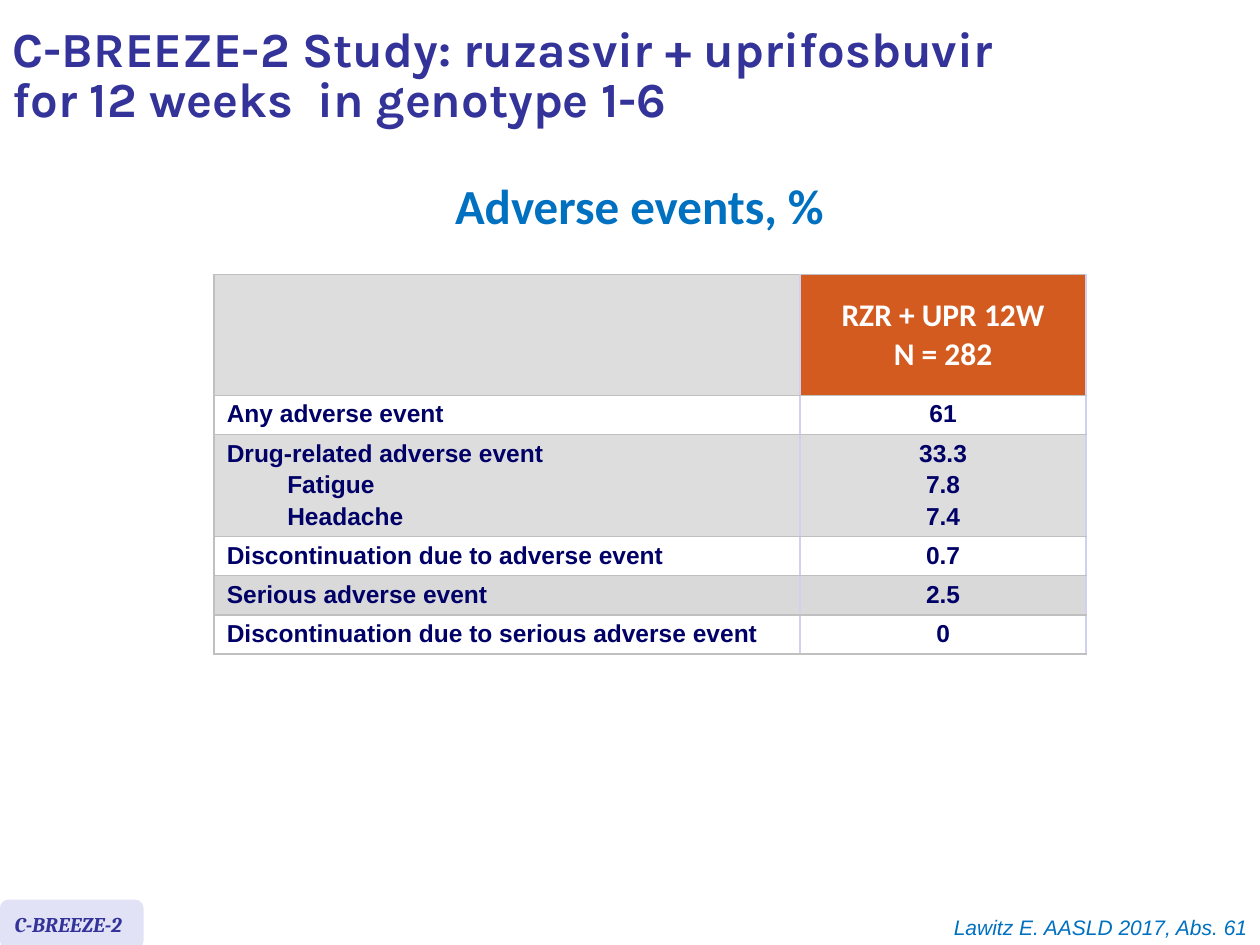
from lxml.etree import SubElement
from pptx import Presentation
from pptx.dml.color import RGBColor
from pptx.enum.shapes import MSO_SHAPE
from pptx.enum.text import MSO_ANCHOR, PP_ALIGN as Align
from pptx.oxml.ns import qn
from pptx.util import Inches, Pt

TITLE = "C-BREEZE-2 Study: ruzasvir + uprifosbuvir for 12 weeks  in genotype 1-6"
HEAD = "Adverse events, %"
CITE = "Lawitz E. AASLD 2017, Abs. 61"
BADGE = "C-BREEZE-2"
ROWS = [
    (0.96, "DDDDDD", [], ["RZR + UPR 12W", "N = 282"]),
    (0.31, "FFFFFF", ["Any adverse event"], ["61"]),
    (0.81, "DDDDDD", ["Drug-related adverse event", "Fatigue", "Headache"],
     ["33.3", "7.8", "7.4"]),
    (0.31, "FFFFFF", ["Discontinuation due to adverse event"], ["0.7"]),
    (0.31, "D9D9D9", ["Serious adverse event"], ["2.5"]),
    (0.31, "FFFFFF", ["Discontinuation due to serious adverse event"], ["0"]),
]
COLS = [4.65, 2.27]
GREY, LILAC, INDIGO, BLUE = "C0C0C0", "D0D0F0", "333399", "0070C0"


def paint(fill, tone):
    fill.solid()
    fill.fore_color.rgb = RGBColor.from_string(tone)


def style(par, size, face, tone, bold=True, italic=False, align=Align.LEFT):
    par.alignment = align
    font = par.font
    font.size, font.name, font.bold, font.italic = Pt(size), face, bold, italic
    font.color.rgb = RGBColor.from_string(tone)


def place(shape, left, top, width, height):
    shape.left, shape.top = Inches(left), Inches(top)
    shape.width, shape.height = Inches(width), Inches(height)


def write(shape, text, *look, **more):
    frame = shape.text_frame
    frame.word_wrap = True
    frame.vertical_anchor = MSO_ANCHOR.MIDDLE
    frame.text = text
    style(frame.paragraphs[0], *look, **more)
    return frame.paragraphs[0]


def label(slide, box, *look, **more):
    write(slide.shapes.add_textbox(*map(Inches, box)), *look, **more)


def edge(cell, tones):
    props = cell._tc.get_or_add_tcPr()
    for side, tone in zip("LRTB", tones):
        line = SubElement(props, qn(f"a:ln{side}"), w=str(Pt(1)))
        SubElement(SubElement(line, qn("a:solidFill")), qn("a:srgbClr"), val=tone)


def fill_cell(cell, lines, tone, head, col):
    edge(cell, [LILAC if col else GREY, LILAC, GREY, GREY])
    paint(cell.fill, tone)
    cell.vertical_anchor = MSO_ANCHOR.MIDDLE
    cell.text = "\n".join(lines)
    align = Align.CENTER if col else Align.LEFT
    for i, par in enumerate(cell.text_frame.paragraphs):
        if i and not col:
            par._p.get_or_add_pPr().set("marL", str(Inches(0.48)))
        if head:
            style(par, 18, "Calibri", "FFFFFF", align=align)
            continue
        style(par, 14, "Arial", "000066", align=align)
        par.line_spacing = Pt(15)
        if i:
            par.space_before = Pt(3)


def add_grid(slide):
    box = (1.7, 2.18, sum(COLS), sum(row[0] for row in ROWS))
    table = slide.shapes.add_table(len(ROWS), len(COLS), *map(Inches, box)).table
    table.first_row = table.horz_banding = False
    for col, width in zip(table.columns, COLS):
        col.width = Inches(width)
    for r, (height, tone, *texts) in enumerate(ROWS):
        table.rows[r].height = Inches(height)
        for c, lines in enumerate(texts):
            shade = "D35B1F" if (r, c) == (0, 1) else tone
            fill_cell(table.cell(r, c), lines, shade, r == 0, c)


def add_badge(slide):
    box = (0, 7.14, 1.14, 0.39)
    badge = slide.shapes.add_shape(MSO_SHAPE.ROUNDED_RECTANGLE, *map(Inches, box))
    badge.shadow.inherit = False
    badge.line.fill.background()
    paint(badge.fill, "E2E2F6")
    write(badge, BADGE, 12, "Cambria", INDIGO, italic=True)


def main():
    deck = Presentation()
    deck.slide_width, deck.slide_height = Inches(10), Inches(7.5)
    slide = deck.slides.add_slide(deck.slide_layouts[5])
    title = slide.shapes.title
    place(title, 0, 0.08, 8.31, 1.07)
    write(title, TITLE, 28, "Karla", INDIGO).line_spacing = 0.85
    label(slide, (0.35, 1.31, 9.45, 0.63), HEAD, 28, "Calibri", BLUE,
          align=Align.CENTER)
    label(slide, (2.64, 7.21, 7.36, 0.3), CITE, 12, "Arial", BLUE,
          bold=False, italic=True, align=Align.RIGHT)
    add_grid(slide)
    add_badge(slide)
    deck.save("out.pptx")


if __name__ == "__main__":
    main()
